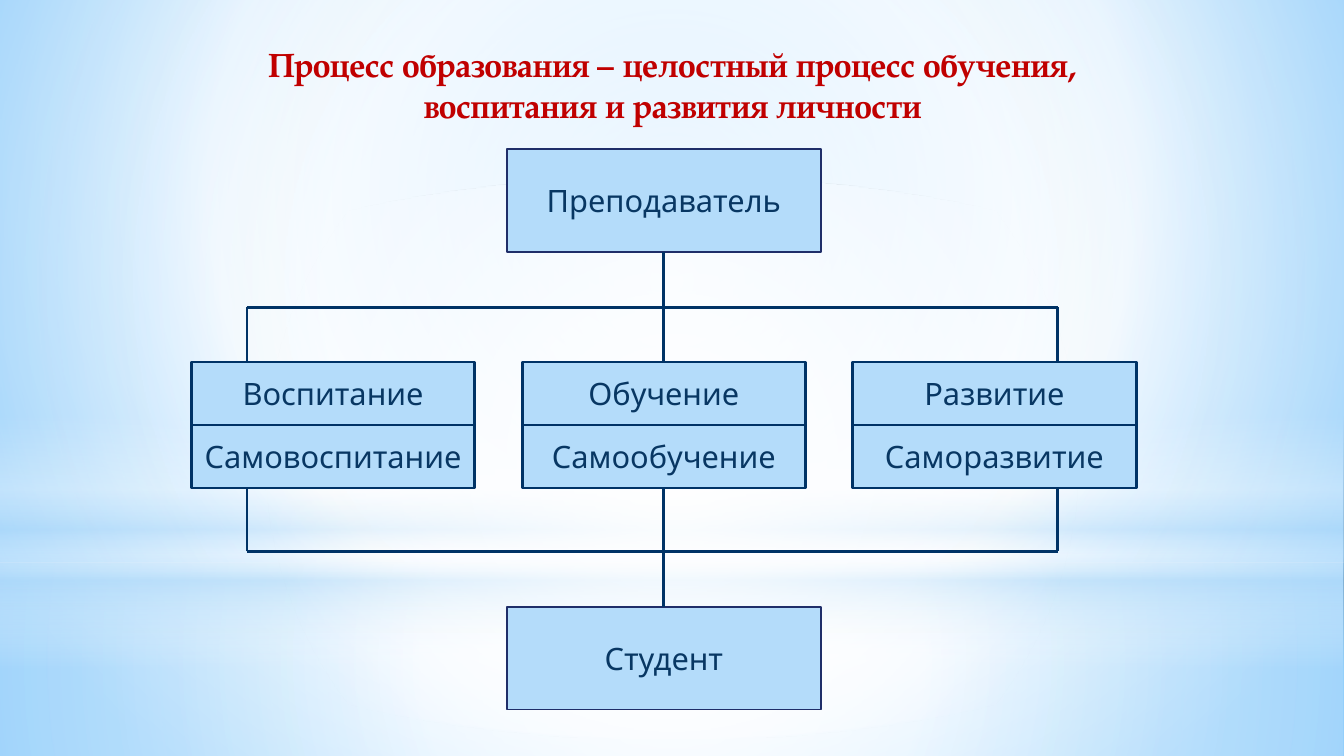
from lxml import etree
from pptx import Presentation
from pptx.dml.color import RGBColor
from pptx.enum.shapes import MSO_CONNECTOR, MSO_SHAPE
from pptx.enum.text import MSO_ANCHOR, PP_ALIGN
from pptx.oxml.ns import qn
from pptx.util import Pt

RECTANGLE, ELLIPSE = MSO_SHAPE.RECTANGLE, MSO_SHAPE.OVAL
STRAIGHT = MSO_CONNECTOR.STRAIGHT
CENTER, TOP, MIDDLE = PP_ALIGN.CENTER, MSO_ANCHOR.TOP, MSO_ANCHOR.MIDDLE
TOP_SIDE, BOTTOM_SIDE = 0, 2

WHITE = RGBColor(0xFF, 0xFF, 0xFF)
PALE_BLUE = RGBColor(0xB4, 0xDC, 0xFA)
SKY = RGBColor(0x9E, 0xD5, 0xFF)
DEEP_SKY = RGBColor(0x5B, 0xB9, 0xFF)
RED = RGBColor(0xC0, 0x00, 0x00)
NAVY = RGBColor(0x00, 0x33, 0x66)
INDIGO = RGBColor(0x1F, 0x2E, 0x69)
TEXT_BLUE = RGBColor(0x08, 0x37, 0x63)

PAGE_WIDTH, PAGE_HEIGHT = 960, 540
TITLE_FONT, BODY_FONT = "TeX Gyre Pagella", "Cabin"
TITLE = "Процесс образования – целостный процесс обучения, воспитания и развития личности"
COLUMNS = [
    ("Воспитание", "Самовоспитание"),
    ("Обучение", "Самообучение"),
    ("Развитие", "Саморазвитие"),
]


def paint_gradient(fill, owner, stops, focus=None):
    """Stops are (position, colour, opacity); without a focus the run is downward."""
    fill.gradient()
    gradient = next(owner.iter(qn("a:gradFill")))
    for child in list(gradient):
        gradient.remove(child)
    stop_list = etree.SubElement(gradient, qn("a:gsLst"))
    for position, color, opacity in stops:
        stop = etree.SubElement(stop_list, qn("a:gs"), pos=str(position * 1000))
        tint = etree.SubElement(stop, qn("a:srgbClr"), val=str(color))
        etree.SubElement(tint, qn("a:alpha"), val=str(opacity * 1000))
    if focus:
        route = etree.SubElement(gradient, qn("a:path"), path="circle")
        sides = {side: str(share * 1000) for side, share in zip("ltrb", focus)}
        etree.SubElement(route, qn("a:fillToRect"), **sides)
    else:
        etree.SubElement(gradient, qn("a:lin"), ang="5400000", scaled="0")


def add_backdrop(page, left, top, width, height):
    middle = (50, 50, 50, 50)
    paint_gradient(page.background.fill, page.element,
                   [(0, SKY, 100), (60, WHITE, 100), (100, DEEP_SKY, 100)],
                   (20, 10, 20, 60))
    horizon = 401.8
    layers = [
        # Floor, sky, horizon band and central glow
        (RECTANGLE, horizon, height - horizon,
         [(0, WHITE, 91), (37, WHITE, 76), (100, PALE_BLUE, 79)], middle),
        (RECTANGLE, 0, horizon,
         [(0, WHITE, 89), (48, WHITE, 62), (100, PALE_BLUE, 79)], middle),
        (RECTANGLE, 296.6, 180,
         [(0, WHITE, 0), (29, WHITE, 30), (45, PALE_BLUE, 40),
          (55, WHITE, 26), (65, PALE_BLUE, 60), (100, WHITE, 0)], None),
        (ELLIPSE, 126, horizon, [(0, WHITE, 100), (56, WHITE, 0)], middle),
    ]
    for kind, offset, depth, stops, focus in layers:
        layer = page.shapes.add_shape(kind, Pt(left), Pt(top + offset), Pt(width), Pt(depth))
        layer.shadow.inherit = False
        layer.line.fill.background()
        paint_gradient(layer.fill, layer.element, stops, focus)


def write_text(frame, text, font, size, color, bold=False):
    para = frame.paragraphs[0]
    para.alignment = CENTER
    span = para.add_run()
    span.text = text
    span.font.name, span.font.size = font, Pt(size)
    span.font.color.rgb, span.font.bold = color, bold


def add_title(page, left, top, width, height):
    title = page.shapes.title
    title.left, title.top, title.width, title.height = Pt(left), Pt(top), Pt(width), Pt(height)
    title.text_frame.word_wrap = True
    title.text_frame.vertical_anchor = TOP
    write_text(title.text_frame, TITLE, TITLE_FONT, 24, RED, bold=True)
    # Bring the title in front of the backdrop
    title.element.getparent().append(title.element)


def add_box(page, text, left, top, width, height, line_color, line_width):
    box = page.shapes.add_shape(RECTANGLE, Pt(left), Pt(top), Pt(width), Pt(height))
    box.shadow.inherit = False
    box.fill.solid()
    box.fill.fore_color.rgb = PALE_BLUE
    box.line.color.rgb, box.line.width = line_color, Pt(line_width)
    frame = box.text_frame
    frame.word_wrap = True
    frame.vertical_anchor = MIDDLE
    write_text(frame, text, BODY_FONT, 22, TEXT_BLUE)
    return box


def add_line(page, start_x, start_y, end_x, end_y):
    line = page.shapes.add_connector(STRAIGHT, Pt(start_x), Pt(start_y), Pt(end_x), Pt(end_y))
    line.line.color.rgb, line.line.width = NAVY, Pt(2)
    etree.SubElement(line.element.spPr, qn("a:effectLst"))
    return line


def join_boxes(page, upper, lower):
    line = add_line(page, 0, 0, 0, 0)
    line.begin_connect(upper, BOTTOM_SIDE)
    line.end_connect(lower, TOP_SIDE)


def add_diagram(page, left, top, width, height):
    # Teacher above, student below
    role_width, role_height = 224.6, 73.4
    role_left = left + (width - role_width) / 2
    teacher, student = [
        add_box(page, text, role_left, role_top, role_width, role_height, INDIGO, 1.25)
        for text, role_top in [("Преподаватель", top),
                               ("Студент", top + height - role_height)]
    ]

    # Three columns, each a process over its self-directed form
    cell_width, cell_height = 202.4, 45
    cells_top = top + 152
    cells_bottom = cells_top + 2 * cell_height
    pitch = (width - cell_width) / (len(COLUMNS) - 1)
    columns = [
        [add_box(page, text, left + column * pitch, cells_top + row * cell_height,
                 cell_width, cell_height, NAVY, 2)
         for row, text in enumerate(texts)]
        for column, texts in enumerate(COLUMNS)
    ]

    # Central links and the brackets to the outer columns
    upper, lower = columns[1]
    join_boxes(page, teacher, upper)
    join_boxes(page, lower, student)
    bracket_left, bracket_right = left + 39.6, left + 618.6
    for bar, edge in [(top + 113, cells_top), (top + 287.2, cells_bottom)]:
        add_line(page, bracket_left, bar, bracket_right, bar)
        for x in (bracket_left, bracket_right):
            add_line(page, x, bar, x, edge)


def main():
    deck = Presentation()
    deck.slide_width, deck.slide_height = Pt(PAGE_WIDTH), Pt(PAGE_HEIGHT)
    page = deck.slides.add_slide(deck.slide_layouts.get_by_name("Title Only"))
    add_backdrop(page, 0, 0, PAGE_WIDTH, PAGE_HEIGHT)
    add_title(page, 142.6, 28.1, 675.4, 65.5)
    add_diagram(page, 136.8, 106.6, 674.8, 400.2)
    deck.save("out.pptx")


if __name__ == "__main__":
    main()
